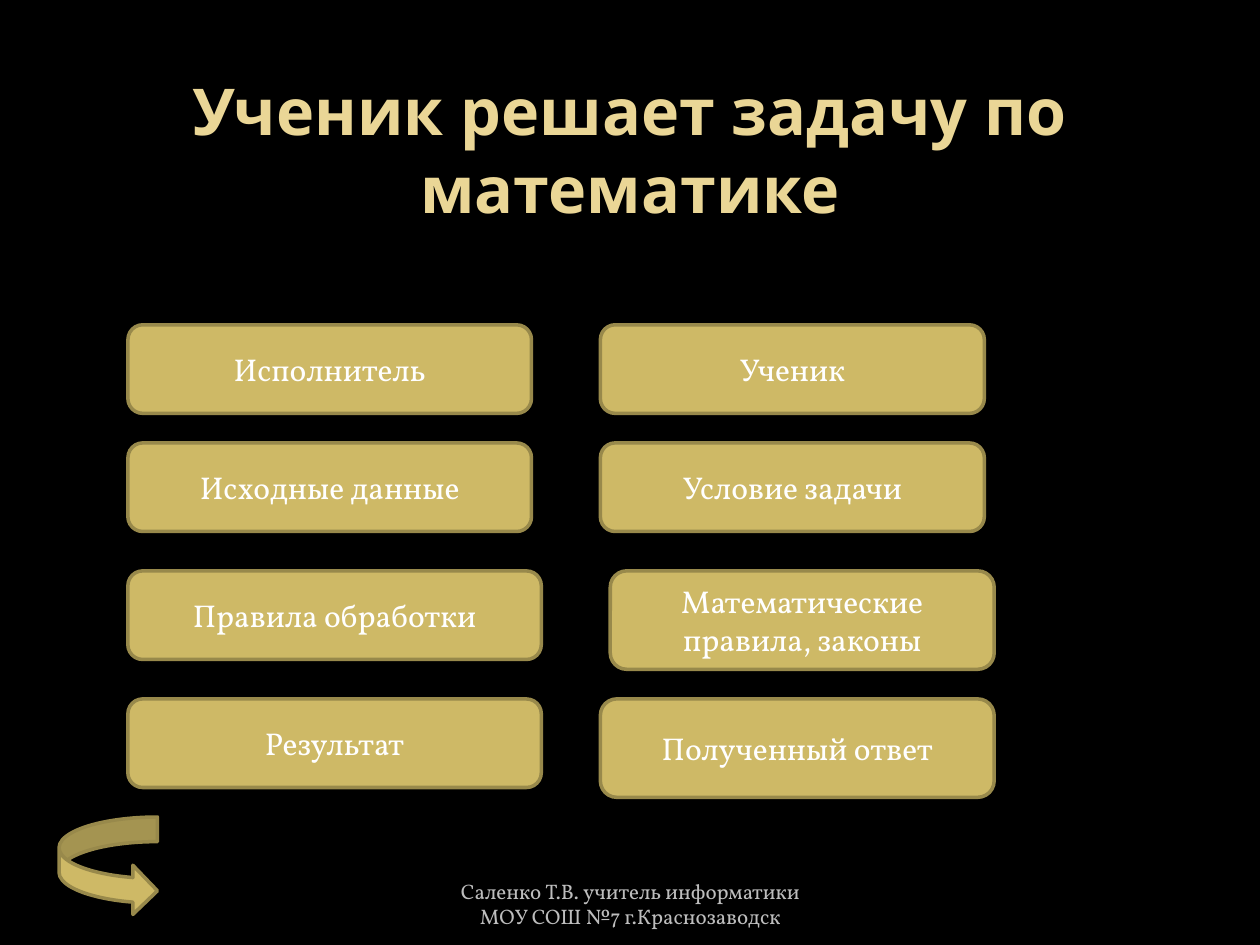
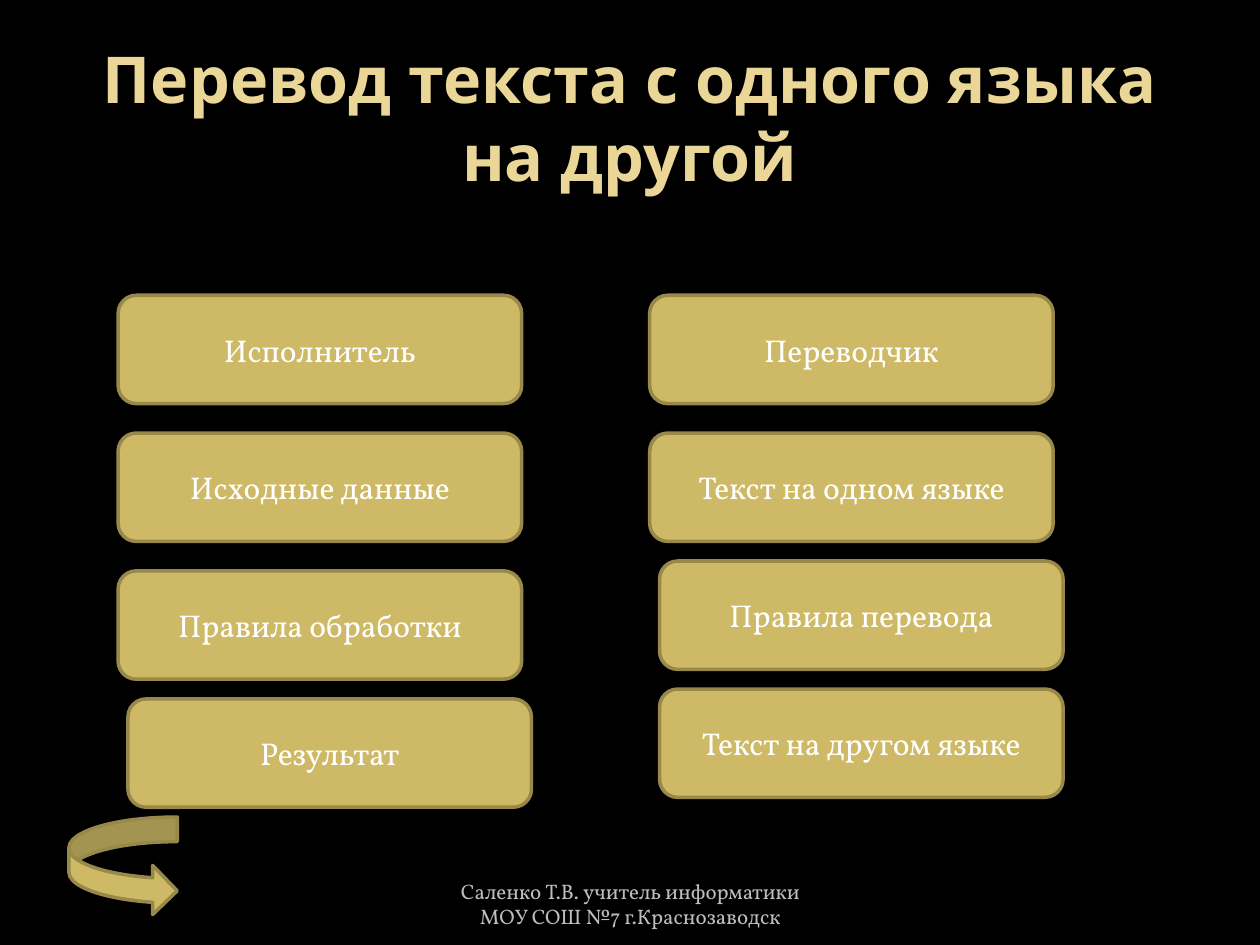
import pptx
import pptx.util
import pptx.dml.color
import pptx.enum.shapes
import pptx.enum.text

Pt = pptx.util.Pt
SHAPES = pptx.enum.shapes.MSO_SHAPE
ANCHOR = pptx.enum.text.MSO_ANCHOR
CENTER = pptx.enum.text.PP_ALIGN.CENTER

COLOURS = {
    "background": "000000",
    "title": "EAD696",
    "gold": "CEB966",
    "outline": "98894B",
    "label": "FFFFFF",
    "footer": "BDBDBD",
}
TITLE_FONT = {"name": "Noto Sans", "size": Pt(36.9), "bold": True}
LABEL_FONT = {"name": "Vollkorn", "size": Pt(18)}
FOOTER_FONT = {"name": "Vollkorn", "size": Pt(12)}

FOOTER = "Саленко Т.В. учитель информатики МОУ СОШ №7 г.Краснозаводск"
FOOTER_PLACE = (246.25, 505.5, 228, 28.75)
TERMS = ["Исполнитель", "Исходные данные", "Правила обработки", "Результат"]

# Places are left, top, width, height in points.
# A column's size is (width, height); "changes" lists what differs in a row.
SLIDES = [
    {
        "title": "Ученик решает задачу по математике",
        "title_place": (36, 56.25, 648, 101.25),
        "title_bottom_inset": 47.6,
        "arrow_place": (33.75, 466.9, 56.25, 56.25),
        "columns": [
            {"labels": TERMS, "left": 73.1, "size": (230.6, 50.6),
             "tops": [185.6, 253.1, 326.25, 399.4],
             "changes": {2: {"width": 236.25}, 3: {"width": 236.25}}},
            {"labels": ["Ученик", "Условие задачи",
                        "Математические правила, законы", "Полученный ответ"],
             "left": 343.1, "size": (219.4, 50.6),
             "tops": [185.6, 253.1, 326.25, 399.4],
             "changes": {2: {"left": 348.75, "height": 56.25},
                         3: {"width": 225, "height": 56.25}}},
        ],
    },
    {
        "title": "Перевод текста с одного языка на другой",
        "title_place": (36, 21.6, 648, 90),
        "title_bottom_inset": 3.6,
        "arrow_place": (39.4, 466.9, 61.9, 56.25),
        "columns": [
            {"labels": TERMS, "left": 67.5, "size": (230.6, 61.9),
             "tops": [168.75, 247.5, 326.25, 399.4],
             "changes": {3: {"left": 73.1}}},
            {"labels": ["Переводчик", "Текст на одном языке",
                        "Правила перевода", "Текст на другом языке"],
             "left": 371.25, "size": (230.6, 61.9),
             "tops": [168.75, 247.5, 320.6, 393.75],
             "changes": {2: {"left": 376.9}, 3: {"left": 376.9}}},
        ],
    },
]


def colour(name):
    return pptx.dml.color.RGBColor.from_string(COLOURS[name])


def in_points(place):
    return [Pt(value) for value in place]


def write(box, text, font, colour_name, anchor=ANCHOR.MIDDLE):
    frame = box.text_frame
    frame.word_wrap = True
    frame.auto_size = pptx.enum.text.MSO_AUTO_SIZE.NONE
    frame.vertical_anchor = anchor
    para = frame.paragraphs[0]
    para.alignment = CENTER
    span = para.add_run()
    span.text = text
    for key, value in font.items():
        setattr(span.font, key, value)
    span.font.color.rgb = colour(colour_name)


def add_gold_shape(page, kind, place):
    shape = page.shapes.add_shape(kind, *in_points(place))
    shape.shadow.inherit = False
    shape.fill.solid()
    shape.fill.fore_color.rgb = colour("gold")
    shape.line.color.rgb = colour("outline")
    shape.line.width = Pt(2)
    return shape


def add_title(page, content):
    title = page.shapes.title
    title.left, title.top, title.width, title.height = in_points(content["title_place"])
    write(title, content["title"], TITLE_FONT, "title")
    title.text_frame.margin_bottom = Pt(content["title_bottom_inset"])


def add_column(page, column):
    width, height = column["size"]
    for row, (label, top) in enumerate(zip(column["labels"], column["tops"])):
        place = {"left": column["left"], "top": top, "width": width, "height": height}
        place.update(column["changes"].get(row, {}))
        box = add_gold_shape(page, SHAPES.ROUNDED_RECTANGLE, place.values())
        write(box, label, LABEL_FONT, "label")


def main():
    deck = pptx.Presentation()
    deck.slide_width, deck.slide_height = Pt(720), Pt(540)
    background = deck.slide_master.background.fill
    background.solid()
    background.fore_color.rgb = colour("background")
    title_only = deck.slide_layouts.get_by_name("Title Only")
    for content in SLIDES:
        page = deck.slides.add_slide(title_only)
        add_title(page, content)
        for column in content["columns"]:
            add_column(page, column)
        footer = page.shapes.add_textbox(*in_points(FOOTER_PLACE))
        write(footer, FOOTER, FOOTER_FONT, "footer", ANCHOR.BOTTOM)
        add_gold_shape(page, SHAPES.CURVED_RIGHT_ARROW, content["arrow_place"])
    deck.save("out.pptx")


if __name__ == "__main__":
    main()
